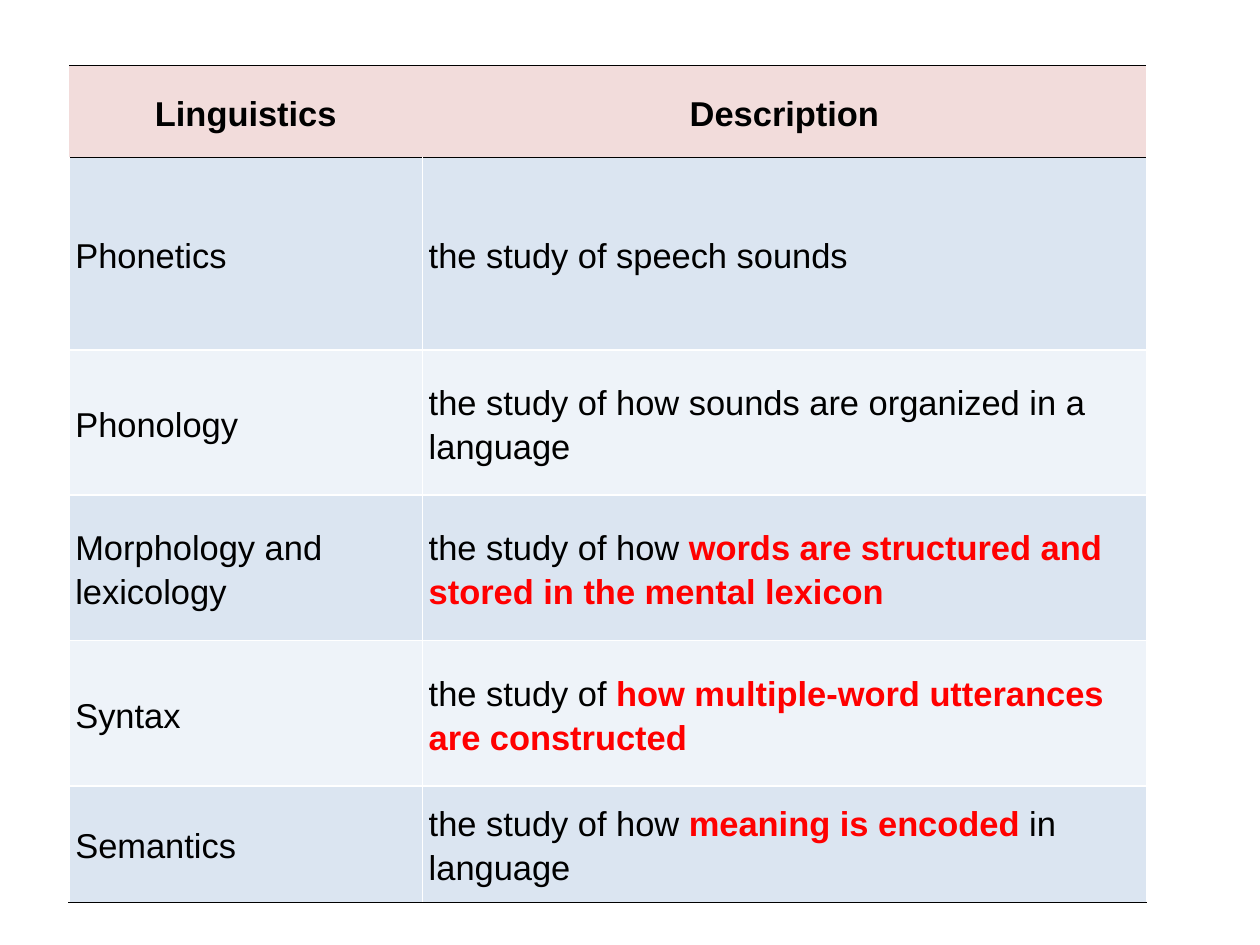
from dataclasses import dataclass

from lxml import etree
from pptx import Presentation
from pptx.dml.color import RGBColor
from pptx.enum import text
from pptx.oxml import ns
from pptx.table import Table, _Cell
from pptx.util import Cm, Pt

BLACK, WHITE, RED = "000000", "FFFFFF", "FF0000"
HEADER_FILL, BAND_FILLS = "F2DCDB", ("DBE5F1", "EEF3F9")
COLUMN_WIDTHS = (10.13, 20.75)
CELL_FORMAT = {
    "vertical_anchor": text.MSO_ANCHOR.MIDDLE,
    "margin_left": Cm(0.18),
    "margin_right": Cm(0.18),
    "margin_top": Cm(0.18),
    "margin_bottom": Cm(0.18),
}


@dataclass(frozen=True)
class Phrase:
    words: str
    strong: bool = False
    color: str = BLACK


@dataclass(frozen=True)
class Entry:
    height: float
    branch: Phrase
    description: tuple[Phrase, ...]


ENTRIES = (
    Entry(2.64, Phrase("Linguistics", True), (Phrase("Description", True),)),
    Entry(5.51, Phrase("Phonetics"), (Phrase("the study of speech sounds"),)),
    Entry(4.17, Phrase("Phonology"),
          (Phrase("the study of how sounds are organized in a language"),)),
    Entry(4.17, Phrase("Morphology and lexicology"),
          (Phrase("the study of how "),
           Phrase("words are structured and stored in the mental lexicon", True, RED))),
    Entry(4.17, Phrase("Syntax"),
          (Phrase("the study of "),
           Phrase("how multiple-word utterances are constructed", True, RED))),
    Entry(3.33, Phrase("Semantics"),
          (Phrase("the study of how "), Phrase("meaning is encoded ", True, RED),
           Phrase("in language"))),
)


def rgb(color: str) -> RGBColor:
    return RGBColor.from_string(color)


def set_border(cell: _Cell, side: str, color: str | None) -> None:
    """Draw one cell side (L, R, T or B), or hide it when color is None."""
    width = Pt(1) if color == BLACK else Pt(1.42)
    line = etree.SubElement(cell._tc.get_or_add_tcPr(), ns.qn(f"a:ln{side}"), w=str(width))
    if color is None:
        etree.SubElement(line, ns.qn("a:noFill"))
    else:
        fill = etree.SubElement(line, ns.qn("a:solidFill"))
        etree.SubElement(fill, ns.qn("a:srgbClr"), val=color)


def write_phrases(cell: _Cell, phrases: tuple[Phrase, ...], align: text.PP_ALIGN) -> None:
    paragraph = cell.text_frame.paragraphs[0]
    layout = {"alignment": align, "line_spacing": 1.15, "space_before": Pt(12)}
    for name, value in layout.items():
        setattr(paragraph, name, value)
    for phrase in phrases:
        run = paragraph.add_run()
        run.text = phrase.words
        run.font.color.rgb = rgb(phrase.color)
        for name, value in {"name": "Arial", "size": Pt(28), "bold": phrase.strong}.items():
            setattr(run.font, name, value)


def fill_row(table: Table, index: int, entry: Entry) -> None:
    header, last = index == 0, index == len(ENTRIES) - 1
    side_color = None if header else WHITE
    borders = {
        "L": side_color,
        "R": side_color,
        "T": BLACK if index < 2 else WHITE,
        "B": BLACK if header or last else WHITE,
    }
    background = HEADER_FILL if header else BAND_FILLS[(index - 1) % 2]
    align = text.PP_ALIGN.CENTER if header else text.PP_ALIGN.LEFT
    table.rows[index].height = Cm(entry.height)
    for column, phrases in enumerate(((entry.branch,), entry.description)):
        cell = table.cell(index, column)
        for name, value in CELL_FORMAT.items():
            setattr(cell, name, value)
        for side, color in borders.items():
            set_border(cell, side, color)
        cell.fill.solid()
        cell.fill.fore_color.rgb = rgb(background)
        write_phrases(cell, phrases, align)


def main() -> None:
    deck = Presentation()
    deck.slide_width, deck.slide_height = Cm(36.12), Cm(27.1)
    slide = deck.slides.add_slide(deck.slide_layouts[6])
    table = slide.shapes.add_table(
        len(ENTRIES), len(COLUMN_WIDTHS), Cm(1.98), Cm(1.88),
        Cm(sum(COLUMN_WIDTHS)), Cm(sum(entry.height for entry in ENTRIES)),
    ).table
    table.first_row = table.horz_banding = False
    for column, width in zip(table.columns, COLUMN_WIDTHS):
        column.width = Cm(width)
    for index, entry in enumerate(ENTRIES):
        fill_row(table, index, entry)
    deck.save("out.pptx")


if __name__ == "__main__":
    main()
